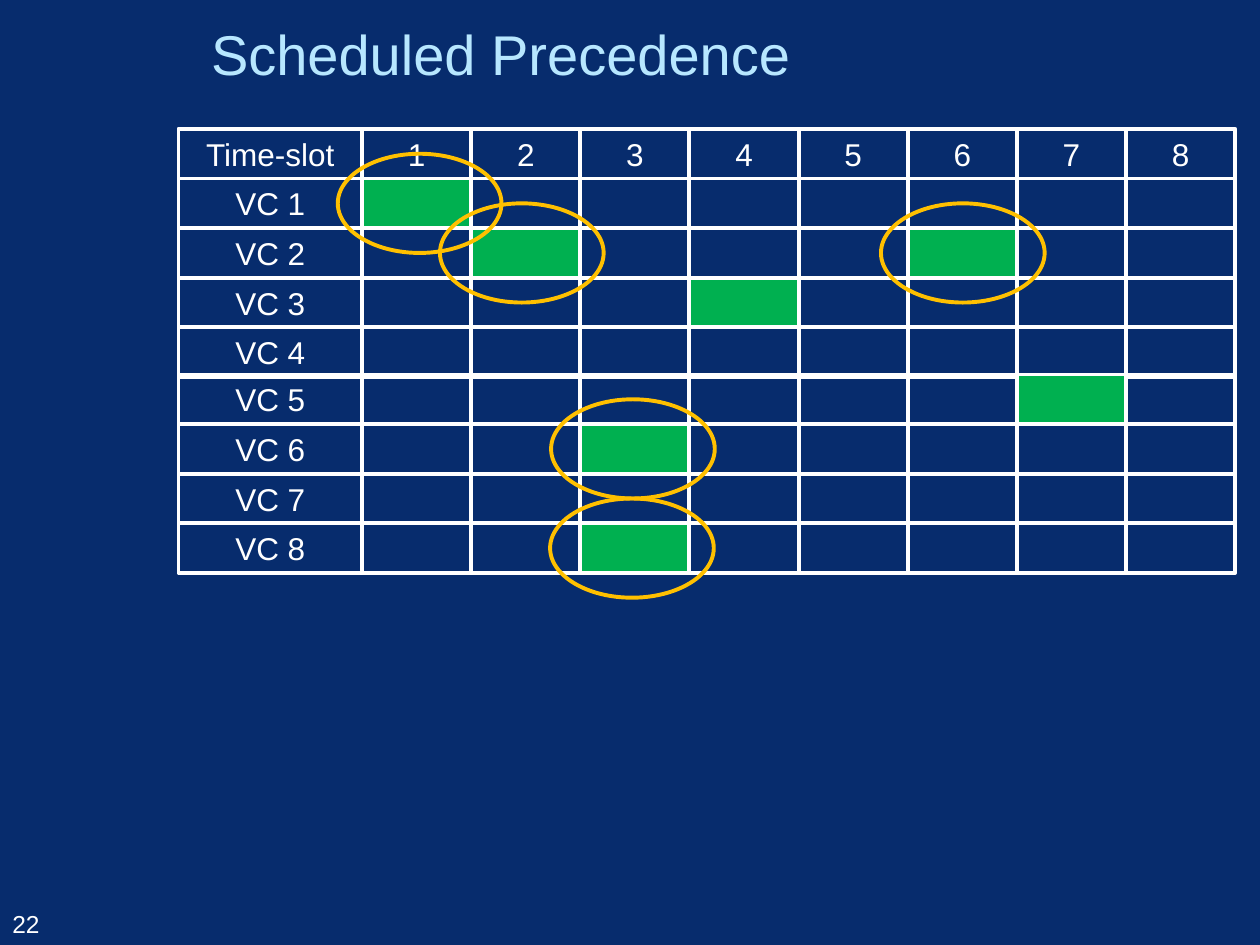
from pptx import Presentation
from pptx.dml.color import RGBColor
from pptx.enum.shapes import MSO_SHAPE
from pptx.enum.text import MSO_ANCHOR, PP_ALIGN
from pptx.util import Cm, Pt

NAVY, WHITE, SKY, GREEN, AMBER = "072C6D", "FFFFFF", "B7E7FF", "00B050", "FFC000"
SLOTS = 8
LABEL_WIDTH, SLOT_WIDTH, ROW_HEIGHT = 3.7, 2.2, 1
LOWER_ROW, LOWER_ROW_RISE = 5, 0.05
RING_WIDTH, RING_HEIGHT = 3.3, 2
BUSY = {(1, 1), (2, 2), (2, 6), (3, 4), (5, 7), (6, 3), (8, 3)}
FIRST_RING = (1, 1, 0.06)
RING_PAIRS = [[(2, 2, -0.08), (2, 6, 0.01)], [(6, 3, -0.04), (8, 3, -0.06)]]


def color(value):
    return RGBColor.from_string(value)


def write(box, text, size=18, tint=WHITE, align=PP_ALIGN.LEFT, anchor=MSO_ANCHOR.MIDDLE):
    frame = box.text_frame
    frame.word_wrap = True
    frame.vertical_anchor = anchor
    para = frame.paragraphs[0]
    para.alignment = align
    span = para.add_run()
    span.text = text
    span.font.name = "Arial"
    span.font.size = Pt(size)
    span.font.color.rgb = color(tint)


def add_outlined(shapes, kind, left, top, width, height, line, fill=None):
    box = shapes.add_shape(kind, Cm(left), Cm(top), Cm(width), Cm(height))
    box.shadow.inherit = False
    box.line.color.rgb = color(line)
    box.line.width = Pt(2.25)
    if fill:
        box.fill.solid()
        box.fill.fore_color.rgb = color(fill)
    else:
        box.fill.background()
    return box


def add_title(page, left, top, width, height):
    title = page.shapes.title
    title.left, title.top, title.width, title.height = map(Cm, (left, top, width, height))
    write(title, "Scheduled Precedence", size=32, tint=SKY)


def add_page_number(page, left, top, width, height):
    box = page.shapes.add_textbox(Cm(left), Cm(top), Cm(width), Cm(height))
    write(box, "22", size=14, anchor=MSO_ANCHOR.BOTTOM)


def cell_box(left, top, row, slot):
    x = left + (LABEL_WIDTH + (slot - 1) * SLOT_WIDTH if slot else 0)
    y = top + row * ROW_HEIGHT - (LOWER_ROW_RISE if row >= LOWER_ROW else 0)
    return x, y, SLOT_WIDTH if slot else LABEL_WIDTH, ROW_HEIGHT


def cell_text(row, slot):
    if row == 0:
        return str(slot) if slot else "Time-slot"
    return "" if slot else f"VC {row}"


def add_ring(shapes, left, top, row, slot, shift):
    x, y, width, height = cell_box(left, top, row, slot)
    add_outlined(shapes, MSO_SHAPE.OVAL, x + (width - RING_WIDTH) / 2 + shift,
                 y + (height - RING_HEIGHT) / 2, RING_WIDTH, RING_HEIGHT, AMBER)


def add_schedule(page, left, top):
    for row in range(9):
        for slot in range(SLOTS + 1):
            fill = GREEN if (row, slot) in BUSY else None
            box = add_outlined(page.shapes, MSO_SHAPE.RECTANGLE,
                               *cell_box(left, top, row, slot), WHITE, fill)
            text = cell_text(row, slot)
            if text:
                write(box, text, align=PP_ALIGN.CENTER)
    add_ring(page.shapes, left, top, *FIRST_RING)
    for pair in RING_PAIRS:
        group = page.shapes.add_group_shape()
        for ring in pair:
            add_ring(group.shapes, left, top, *ring)


def main():
    deck = Presentation()
    deck.slide_width, deck.slide_height = Cm(25.4), Cm(19.05)
    page = deck.slides.add_slide(deck.slide_layouts[5])
    page.background.fill.solid()
    page.background.fill.fore_color.rgb = color(NAVY)
    add_title(page, 4, 0, 21.4, 2.13)
    add_page_number(page, 0, 17.73, 2.7, 1.32)
    add_schedule(page, 3.6, 2.6)
    deck.save("out.pptx")


if __name__ == "__main__":
    main()
